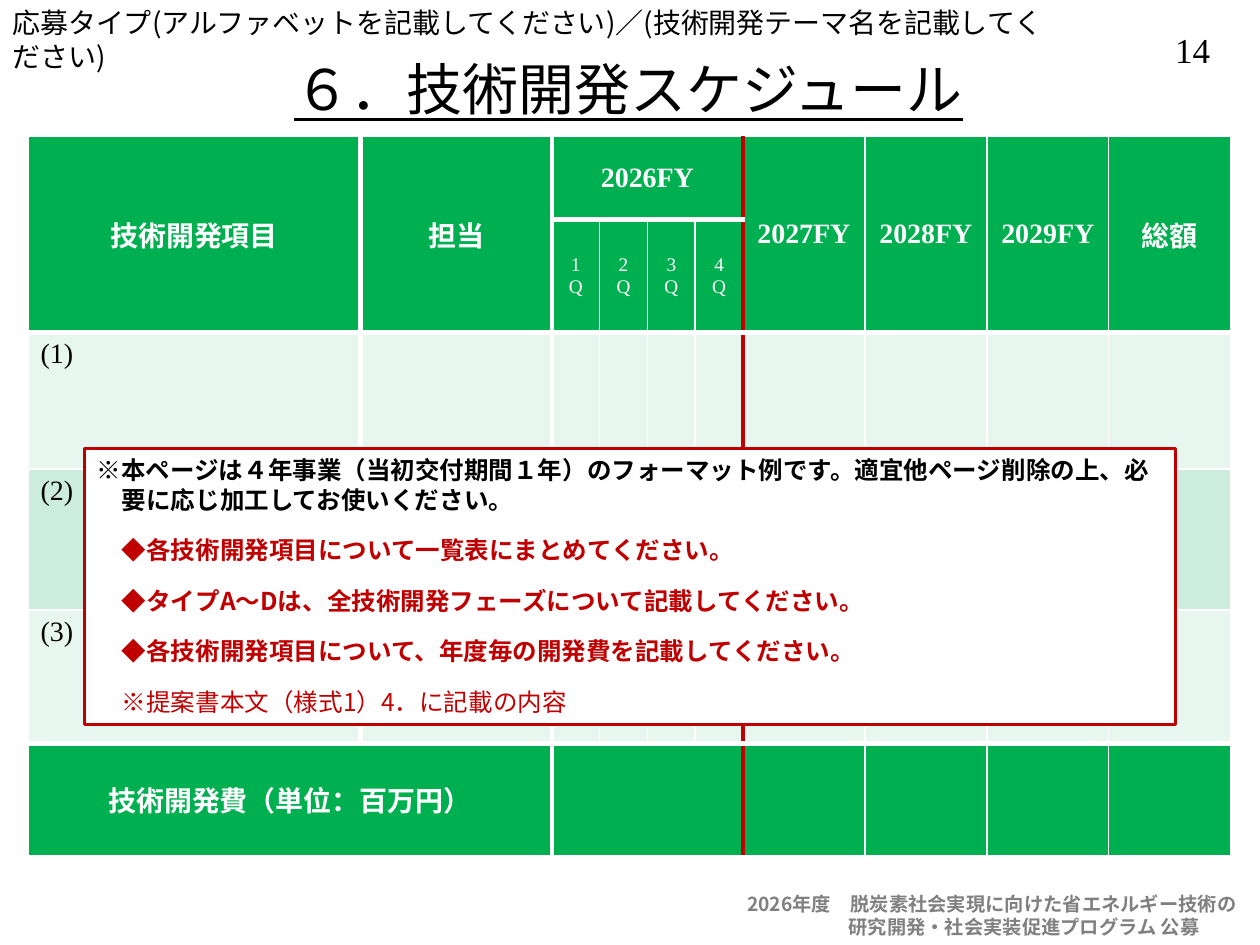
from pptx import Presentation
from pptx.dml.color import RGBColor
from pptx.enum.shapes import MSO_SHAPE as Form
from pptx.enum.text import MSO_ANCHOR as Anchor, MSO_AUTO_SIZE as Auto, PP_ALIGN as Align
from pptx.oxml.ns import qn
from pptx.util import Pt
from lxml.etree import SubElement as Sub

BLACK = RGBColor(0x00, 0x00, 0x00)
WHITE = RGBColor(0xFF, 0xFF, 0xFF)
RED = RGBColor(0xC0, 0x00, 0x00)
GRAY = RGBColor(0x80, 0x80, 0x80)
GREEN = RGBColor(0x00, 0xB0, 0x50)
PALE = RGBColor(0xE7, 0xF6, 0xEF)
MINT = RGBColor(0xCC, 0xEC, 0xDE)

SANS = "Noto Sans CJK JP"
SERIF = "Times New Roman"
PITCH = 1.21

COLS = [190, 109.4] + [27.3] * 4 + [69.7] * 4
ROWS = [47.5, 64.5, 78, 80.5, 76.5, 64]
FILLS = [GREEN, GREEN, PALE, MINT, PALE, GREEN]
EDGES_X = {1: (WHITE, 3), 2: (WHITE, 3), 6: (RED, 3)}
EDGES_Y = {1: (WHITE, 3), 2: (WHITE, 3), 5: (WHITE, 3)}
THIN = (WHITE, 1)
SPANS = [(0, 0, 2, 1), (0, 1, 2, 1), (0, 2, 1, 4), (5, 0, 1, 2), (5, 2, 1, 4)]
SPANS += [(0, col, 2, 1) for col in range(6, 10)]
HEADS = {0: "技術開発項目", 1: "担当", 2: "2026FY", 6: "2027FY",
         7: "2028FY", 8: "2029FY", 9: "総額"}
NOTES = [
    ("※本ページは４年事業（当初交付期間１年）のフォーマット例です。適宜他ページ削除の上、"
     "必要に応じ加工してお使いください。", BLACK, True),
    ("◆各技術開発項目について一覧表にまとめてください。", RED, True),
    ("◆タイプA～Dは、全技術開発フェーズについて記載してください。", RED, True),
    ("◆各技術開発項目について、年度毎の開発費を記載してください。", RED, True),
    ("※提案書本文（様式1）4．に記載の内容", RED, False),
]


def add_run(para, text, size, color, face=SANS, bold=False, line=False):
    run = para.add_run()
    run.text = text
    font = run.font
    font.size, font.bold, font.name = Pt(size), bold, face
    font.underline = line
    font.color.rgb = color
    Sub(font._element, qn("a:ea"), typeface=SANS)
    if face == SANS:
        para.line_spacing = Pt(size * PITCH)


def indent(para, left, first=0):
    props = para._p.get_or_add_pPr()
    props.set("marL", str(Pt(left)))
    props.set("indent", str(Pt(first)))


def next_para(frame, index):
    return frame.add_paragraph() if index else frame.paragraphs[0]


def add_box(slide, x, y, w, h, wrap=True, grow=True):
    frame = slide.shapes.add_textbox(Pt(x), Pt(y), Pt(w), Pt(h)).text_frame
    frame.word_wrap = wrap
    frame.auto_size = Auto.SHAPE_TO_FIT_TEXT if grow else Auto.NONE
    return frame


def add_label(slide, area, text, size, face=SANS, line=False, align=Align.CENTER, **opts):
    frame = add_box(slide, *area, **opts)
    para = frame.paragraphs[0]
    para.alignment = align
    add_run(para, text, size, BLACK, face, line=line)
    return frame


def add_foot(slide):
    frame = add_box(slide, 419.8, 506.2, 300.2, 33.8)
    lines = [("2026年度　脱炭素社会実現に向けた省エネルギー技術の", 0),
             ("研究開発・社会実装促進プログラム 公募", 58)]
    for index, (text, left) in enumerate(lines):
        para = next_para(frame, index)
        indent(para, left)
        add_run(para, text, 11, GRAY, bold=True)


def add_edge(cell, side, color, width):
    props = cell._tc.get_or_add_tcPr()
    line = Sub(props, qn("a:ln" + side), w=str(Pt(width)))
    fill = Sub(line, qn("a:solidFill"))
    Sub(fill, qn("a:srgbClr"), val=str(color))


def style_cell(cell, row, col):
    high, wide = (cell.span_height, cell.span_width) if cell.is_merge_origin else (1, 1)
    add_edge(cell, "L", *EDGES_X.get(col, THIN))
    add_edge(cell, "R", *EDGES_X.get(col + wide, THIN))
    add_edge(cell, "T", *EDGES_Y.get(row, THIN))
    add_edge(cell, "B", *EDGES_Y.get(row + high, THIN))
    cell.fill.solid()
    cell.fill.fore_color.rgb = FILLS[row]


def write_cell(cell, text, size=16, color=WHITE, bold=True, mid=True):
    para = cell.text_frame.paragraphs[0]
    if mid:
        cell.vertical_anchor = Anchor.MIDDLE
        para.alignment = Align.CENTER
    add_run(para, text, size, color, SERIF, bold)


def add_plan(slide):
    frame = slide.shapes.add_table(len(ROWS), len(COLS), Pt(16), Pt(78),
                                   Pt(sum(COLS)), Pt(sum(ROWS)))
    table = frame.table
    table.first_row = table.horz_banding = False
    for col, width in zip(table.columns, COLS):
        col.width = Pt(width)
    for row, height in zip(table.rows, ROWS):
        row.height = Pt(height)
    for row, col, high, wide in SPANS:
        table.cell(row, col).merge(table.cell(row + high - 1, col + wide - 1))
    for row in range(len(ROWS)):
        for col in range(len(COLS)):
            cell = table.cell(row, col)
            if not cell.is_spanned:
                style_cell(cell, row, col)
    for col, text in HEADS.items():
        write_cell(table.cell(0, col), text)
    for num in range(1, 5):
        write_cell(table.cell(1, num + 1), f"{num}Q", 11, bold=False)
    for num in range(1, 4):
        write_cell(table.cell(num + 1, 0), f"({num})", color=BLACK, bold=False, mid=False)
    write_cell(table.cell(5, 0), "技術開発費（単位：百万円）")


def add_notes(slide):
    shape = slide.shapes.add_shape(Form.RECTANGLE, Pt(48.2), Pt(256.3), Pt(623.5), Pt(157.7))
    shape.shadow.inherit = False
    shape.fill.solid()
    shape.fill.fore_color.rgb = WHITE
    shape.line.color.rgb = RED
    shape.line.width = Pt(1.5)
    frame = shape.text_frame
    frame.word_wrap = True
    frame.auto_size = Auto.SHAPE_TO_FIT_TEXT
    frame.vertical_anchor = Anchor.TOP
    for index, (text, color, bold) in enumerate(NOTES):
        para = next_para(frame, index)
        para.alignment = Align.LEFT
        indent(para, 14.4, 0 if index else -14.4)
        if index:
            para.space_before = Pt(12)
        add_run(para, text, 14, color, bold=bold)


def main():
    deck = Presentation()
    deck.slide_width, deck.slide_height = Pt(720), Pt(540)
    slide = deck.slides.add_slide(deck.slide_layouts[6])
    add_label(slide, (658, 13, 47, 31), "14", 20, SERIF, wrap=False)
    add_label(slide, (0, -0.7, 605, 26.6),
              "応募タイプ(アルファベットを記載してください)／(技術開発テーマ名を記載してください)",
              16, align=Align.LEFT)
    add_foot(slide)
    title = add_label(slide, (53.3, 25.2, 612, 50.4), "６．技術開発スケジュール", 32,
                      line=True, grow=False)
    title.vertical_anchor = Anchor.MIDDLE
    add_plan(slide)
    add_notes(slide)
    deck.save("out.pptx")


if __name__ == "__main__":
    main()
